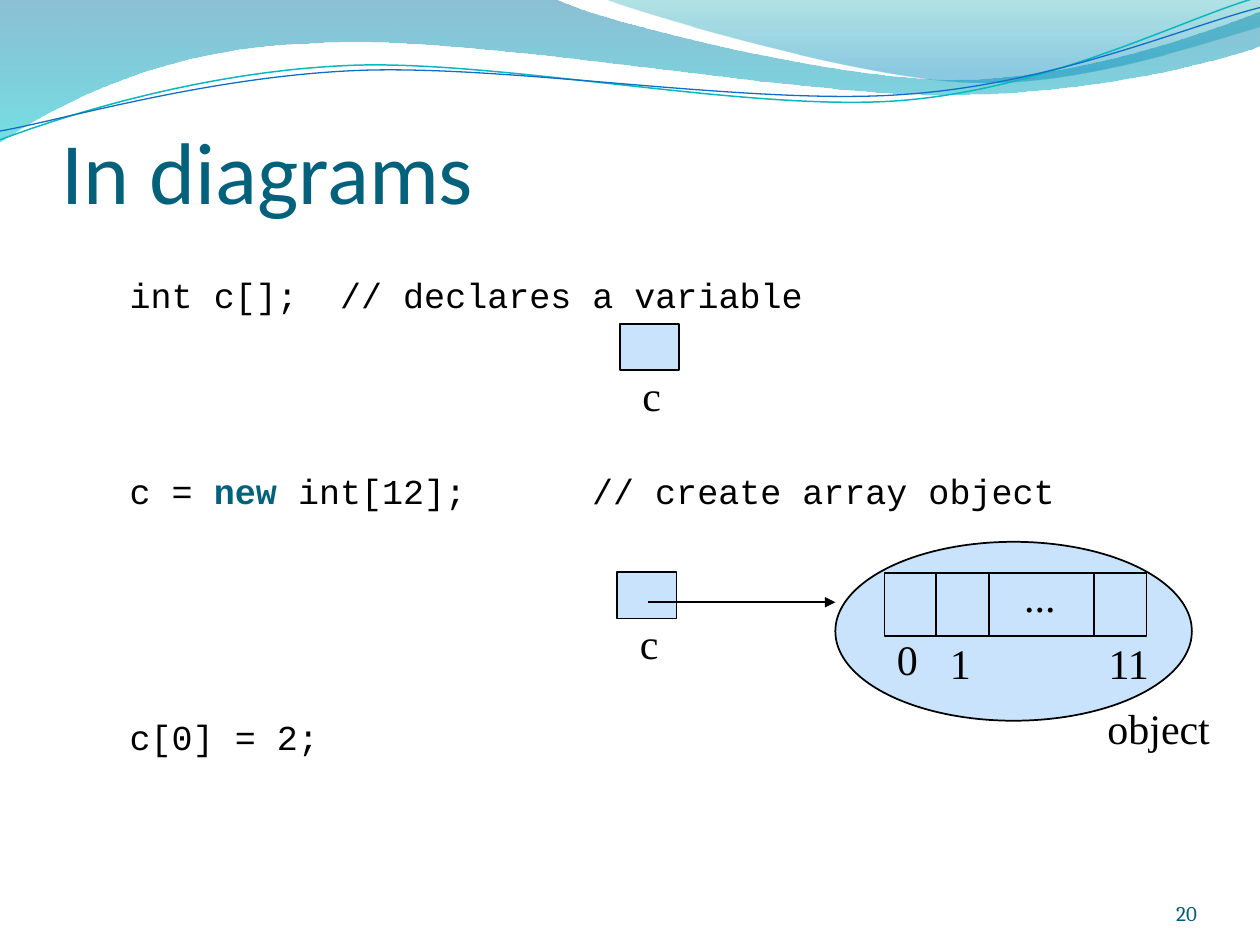
"""Build the slide that shows how a Java array variable refers to its object."""
from lxml.etree import SubElement
from pptx import Presentation
from pptx.dml.color import RGBColor
from pptx.enum.shapes import MSO_CONNECTOR as CONN, MSO_SHAPE as SHAPE
from pptx.enum.text import MSO_ANCHOR as ANCHOR, PP_ALIGN as ALIGN
from pptx.oxml.ns import qn
from pptx.util import Inches, Pt

COLORS = {
    "title": "04617B", "text": "000000", "number": "045D75", "box": "C8E3FB",
    "sea": "0074A1", "aqua": "00C6CF", "teal": "00A1A9", "sky": "008BBF",
    "wave_teal": "0AB8BF", "wave_blue": "0F6FC6",
}

BANDS = [
    ([("L", 0, 0), ("L", 4.4, -0.01), ("C", 4.76, 0.17, 6.64, 0.63, 7.58, 0.63),
      ("C", 8.53, 0.63, 9.58, 0.26, 10, 0.09), ("L", 10.01, 0.36),
      ("C", 9.83, 0.44, 8.7, 0.76, 7.46, 0.75), ("C", 6.22, 0.75, 3.82, 0.28, 2.57, 0.34),
      ("C", 1.29, 0.36, 0.46, 0.83, -0.01, 1.13)],
     [(0, "sea", 45), (1, "aqua", 55)]),
    ([("L", 4.79, -0.01), ("C", 5.09, 0.11, 6.82, 0.62, 7.69, 0.65),
      ("C", 8.56, 0.69, 9.61, 0.32, 10, 0.21), ("L", 10, 0)],
     [(0, "teal", 30), (0.8, "sky", 45)]),
]
WAVES = [
    ([("L", 0, 1.11), ("C", 0.48, 0.93, 1.58, 0.57, 2.77, 0.52),
      ("C", 3.95, 0.47, 5.93, 0.89, 7.13, 0.8), ("C", 8.33, 0.71, 9.38, 0.15, 9.98, -0.02)],
     "wave_teal", 0.85),
    ([("L", 0, 1.04), ("C", 0.47, 0.96, 1.64, 0.61, 2.83, 0.56),
      ("C", 4.03, 0.51, 5.97, 0.84, 7.17, 0.75), ("C", 8.36, 0.67, 9.41, 0.21, 10, 0.06)],
     "wave_blue", 0.75),
]

TITLE = {"size": 50, "name": "Calibri", "color": "title"}
CODE = {"size": 20, "name": "Courier New", "color": "text"}
KEYWORD = {**CODE, "color": "title", "bold": True}
LABEL = {"size": 24, "name": "Times New Roman", "color": "text"}
NUMBER = {"size": 12, "name": "Cambria", "color": "number"}

CODE_LINES = [
    (3.5, 1.67, [("int c[];\t// declares a variable", CODE)]),
    (88.2, 3.67, [("c = ", CODE), ("new", KEYWORD), (" int[12];\t// create array object", CODE)]),
    (116.3, None, [("c[0] = 2;", CODE)]),
]
SHAPES = [
    (SHAPE.OVAL, (6.63, 4.3, 2.83, 1.42), "box"),
    (SHAPE.RECTANGLE, (7.02, 4.55, 2.08, 0.5), None),
    (SHAPE.RECTANGLE, (4.9, 4.54, 0.47, 0.37), "box"),
    (SHAPE.RECTANGLE, (4.92, 2.57, 0.47, 0.37), "box"),
]
DIVIDERS = [7.43, 7.85, 8.68]
LABELS = [
    ("object", (8.69, 5.53, 1.02, 0.5)),
    ("c", (4.98, 4.85, 0.35, 0.5)),
    ("...", (8.03, 4.48, 0.45, 0.5)),
    ("0", (7.02, 4.98, 0.37, 0.5)),
    ("1", (7.44, 5.01, 0.37, 0.5)),
    ("11", (8.7, 5.01, 0.53, 0.5)),
    ("c", (5, 2.88, 0.35, 0.5)),
]


def rgb(name):
    return RGBColor.from_string(COLORS[name])


def inches(values):
    return [Inches(v) for v in values]


def set_line(sp, color, width=1):
    sp.line.color.rgb = rgb(color)
    sp.line.width = Pt(width)


def add_curve(s, segments, close):
    start, *rest = [(round(xy[i] * 100), round(xy[i + 1] * 100))
                    for _, *xy in segments for i in range(0, len(xy), 2)]
    builder = s.shapes.build_freeform(*start, scale=Inches(0.01))
    builder.add_line_segments(rest, close=close)
    sp = builder.convert_to_shape()
    sp.shadow.inherit = False
    edges = iter(list(sp._element.spPr.iter(qn("a:lnTo"))))
    for kind, *_ in segments[1:]:
        edge = next(edges)
        if kind == "C":
            outline = edge.getparent()
            bezier = outline.makeelement(qn("a:cubicBezTo"))
            edge.addprevious(bezier)
            for part in (edge, next(edges), next(edges)):
                bezier.append(part[0])
                outline.remove(part)
    return sp


def add_band(s, segments, stops):
    sp = add_curve(s, segments, True)
    sp.line.fill.background()
    sp.fill.gradient()
    sp.fill.gradient_angle = 270
    for stop, (position, color, _) in zip(sp.fill.gradient_stops, stops):
        stop.position = position
        stop.color.rgb = rgb(color)
    for clr, (_, _, alpha) in zip(sp._element.spPr.iter(qn("a:srgbClr")), stops):
        SubElement(clr, qn("a:alpha"), val=str(alpha * 1000))


def add_connector(s, start, end, arrow=False):
    line = s.shapes.add_connector(CONN.STRAIGHT, *inches(start + end))
    set_line(line, "text")
    if arrow:
        SubElement(line.line._get_or_add_ln(), qn("a:tailEnd"), type="triangle")
    SubElement(line._element.spPr, qn("a:effectLst"))


def add_run(p, text, style):
    r = p.add_run()
    r.text = text
    font = {**style, "size": Pt(style["size"])}
    r.font.color.rgb = rgb(font.pop("color"))
    for key, value in font.items():
        setattr(r.font, key, value)


def add_frame(s, box, **settings):
    tf = s.shapes.add_textbox(*inches(box)).text_frame
    for key, value in settings.items():
        setattr(tf, key, value)
    return tf


def add_code(s):
    tf = add_frame(s, (1.03, 2.12, 8.47, 4.8), word_wrap=True, margin_left=0)
    for i, (before, tab, runs) in enumerate(CODE_LINES):
        p = tf.add_paragraph() if i else tf.paragraphs[0]
        p.space_before = Pt(before)
        if tab:
            tabs = SubElement(p._p.get_or_add_pPr(), qn("a:tabLst"))
            SubElement(tabs, qn("a:tab"), pos=str(Inches(tab)), algn="l")
        for text, style in runs:
            add_run(p, text, style)


def main():
    prs = Presentation()
    prs.slide_width, prs.slide_height = inches((10, 7.5))
    s = prs.slides.add_slide(prs.slide_layouts[6])

    for segments, stops in BANDS:
        add_band(s, segments, stops)
    for segments, color, width in WAVES:
        sp = add_curve(s, segments, False)
        sp.fill.background()
        set_line(sp, color, width)

    flush = {"word_wrap": True, "vertical_anchor": ANCHOR.BOTTOM,
             "margin_left": 0, "margin_right": 0, "margin_bottom": 0}
    tf = add_frame(s, (0.49, 0.51, 9, 1.25), **flush)
    add_run(tf.paragraphs[0], "In diagrams", TITLE)
    add_code(s)
    tf = add_frame(s, (8.67, 6.95, 0.83, 0.4), **flush)
    tf.paragraphs[0].alignment = ALIGN.RIGHT
    add_run(tf.paragraphs[0], "20", NUMBER)

    for kind, box, fill in SHAPES:
        sp = s.shapes.add_shape(kind, *inches(box))
        sp.shadow.inherit = False
        set_line(sp, "text")
        if fill:
            sp.fill.solid()
            sp.fill.fore_color.rgb = rgb(fill)
        else:
            sp.fill.background()
    for x in DIVIDERS:
        add_connector(s, (x, 4.55), (x, 5.05))
    add_connector(s, (5.14, 4.78), (6.63, 4.78), arrow=True)
    for text, box in LABELS:
        tf = add_frame(s, box, word_wrap=False)
        add_run(tf.paragraphs[0], text, LABEL)

    prs.save("out.pptx")


if __name__ == "__main__":
    main()
